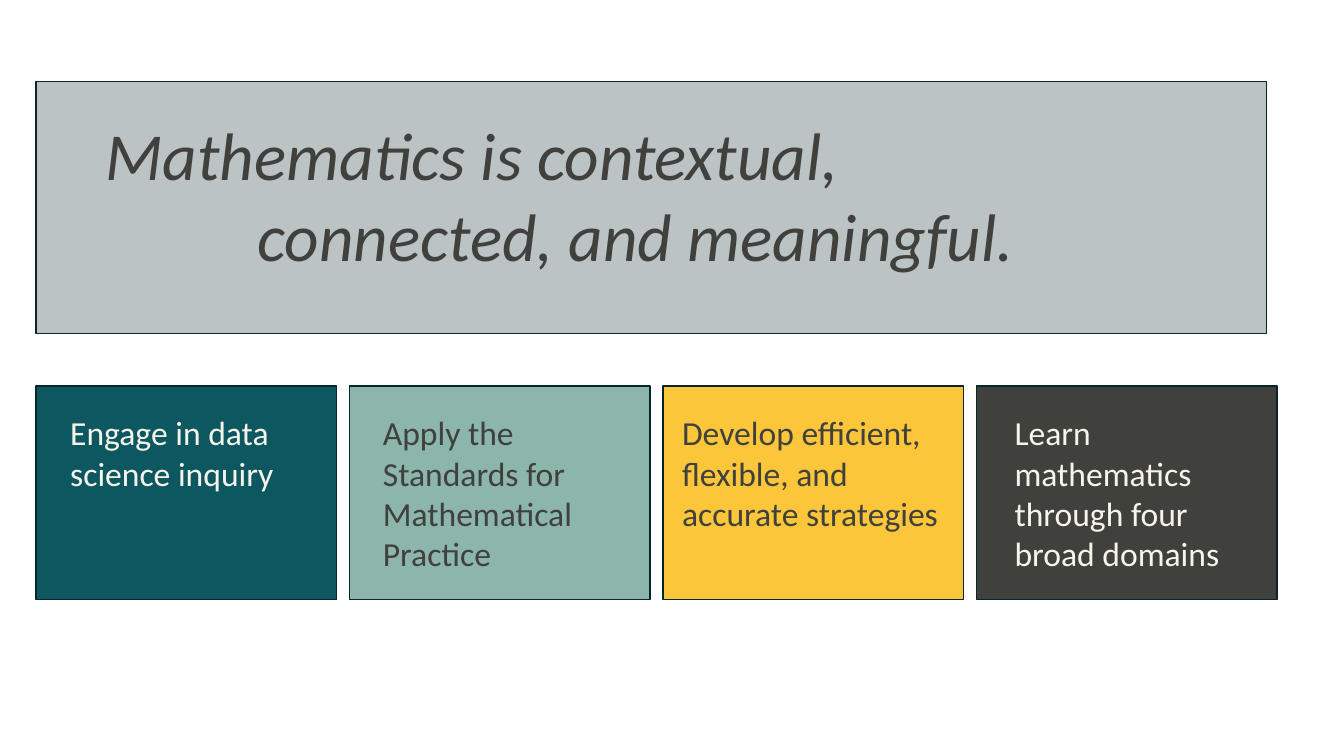
from dataclasses import dataclass

from pptx import Presentation
from pptx import util as u
from pptx.dml.color import RGBColor
from pptx.enum import shapes, text


@dataclass(frozen=True)
class Theme:
    font: str = "Calibri"
    title_size: int = 48
    label_size: int = 24
    line: str = "06262B"
    grey: str = "BCC3C5"
    teal: str = "0D5761"
    sage: str = "8CB5AB"
    gold: str = "FBC639"
    dark: str = "40403D"
    cream: str = "F7F5EB"


theme = Theme()
prs = Presentation()
prs.slide_width, prs.slide_height = u.Cm(33.87), u.Cm(19.05)
s = prs.slides.add_slide(prs.slide_layouts[6])


def add_panel(left, top, width, height, fill):
    sp = s.shapes.add_shape(shapes.MSO_SHAPE.RECTANGLE,
                            *map(u.Cm, (left, top, width, height)))
    sp.shadow.inherit = False
    sp.fill.solid()
    sp.fill.fore_color.rgb = RGBColor.from_string(fill)
    sp.line.color.rgb = RGBColor.from_string(theme.line)
    sp.line.width = u.Pt(1)


def add_text(left, top, width, height, lines, size, color, **formats):
    """Add a wrapping text box with one paragraph for each line."""
    tf = s.shapes.add_textbox(*map(u.Cm, (left, top, width, height))).text_frame
    tf.word_wrap = True
    tf.vertical_anchor = text.MSO_ANCHOR.TOP
    tf.text = "\n".join(lines)
    for p in tf.paragraphs:
        for name, value in {"name": theme.font, "size": u.Pt(size), **formats}.items():
            setattr(p.runs[0].font, name, value)
        p.runs[0].font.color.rgb = RGBColor.from_string(color)
    return tf


# Banner
margin = 0.91
add_panel(margin, 2.06, 31.01, 6.35, theme.grey)
tf = add_text(2.41, 2.74, 29.74, 6.07,
              ["Mathematics is contextual,", "connected, and meaningful."],
              theme.title_size, theme.dark, italic=True)
pPr = tf.paragraphs[1]._p.get_or_add_pPr()
pPr.set("marL", str(u.Cm(3.83)))

# Cards: fill, text colour, label left, label width, label height, label
cards = [
    (theme.teal, theme.cream, 1.52, 6.58, 2.34, "Engage in data science inquiry"),
    (theme.sage, theme.dark, 9.4, 7.06, 4.37,
     "Apply the Standards for Mathematical Practice"),
    (theme.gold, theme.dark, 16.94, 7.04, 3.33,
     "Develop efficient, flexible, and accurate strategies"),
    (theme.dark, theme.cream, 25.32, 6.58, 4.37,
     "Learn mathematics through four broad domains"),
]
card_pitch = 7.9
for i, (fill, color, left, width, height, label) in enumerate(cards):
    add_panel(margin + i * card_pitch, 9.73, 7.57, 5.38, fill)
    add_text(left, 10.26, width, height, [label], theme.label_size, color)

prs.save("out.pptx")
